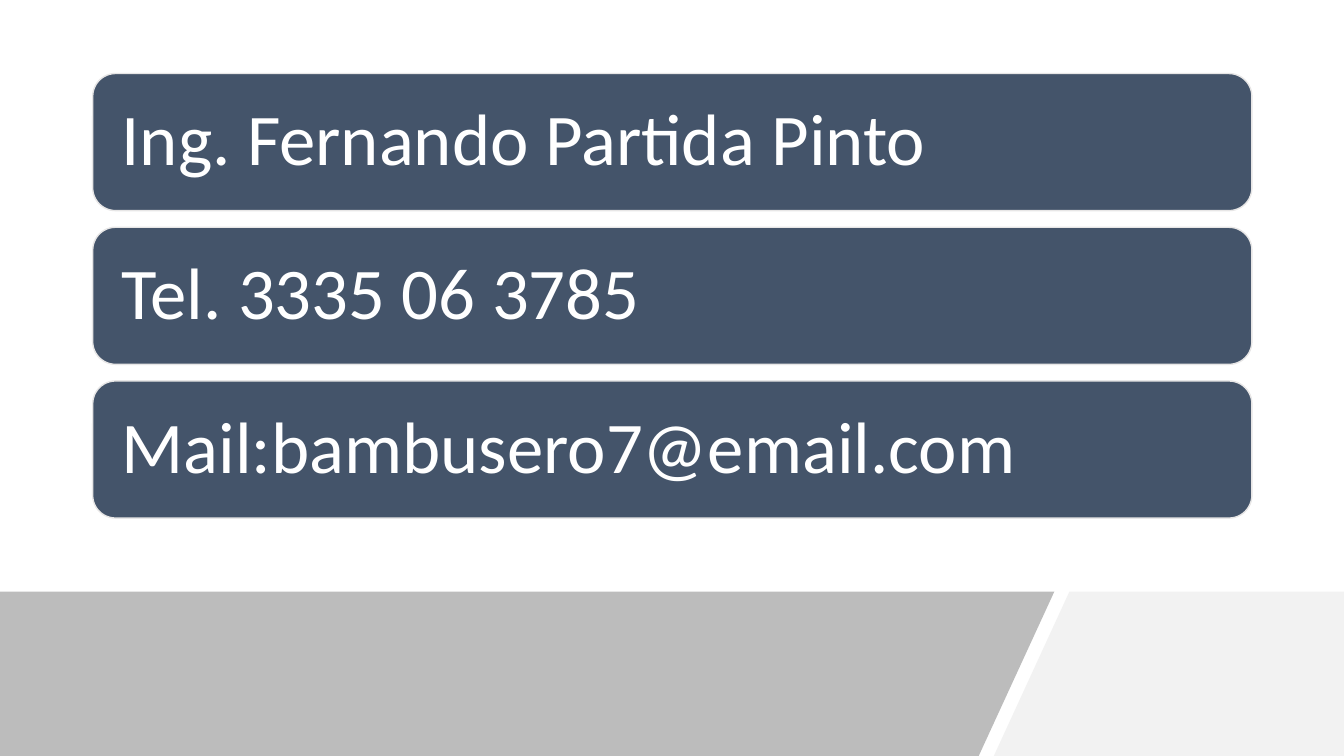
from lxml import etree
from pptx import Presentation
from pptx.dml.color import RGBColor
from pptx.enum.shapes import MSO_SHAPE
from pptx.enum.text import MSO_ANCHOR, PP_ALIGN
from pptx.oxml.ns import qn
from pptx.util import Pt

ROUNDED = MSO_SHAPE.ROUNDED_RECTANGLE
MIDDLE = MSO_ANCHOR.MIDDLE
LEFT = PP_ALIGN.LEFT

COLORS = {
    "bar": "44546A",
    "bar_line": "E7E6E6",
    "text": "FFFFFF",
    "footer_left": "595959",
    "footer_right": "F2F2F2",
}
FONT = "Calibri"
SLIDE_W, SLIDE_H = 960, 540
FOOTER_TOP = 422.64
BAR_LEFT, BAR_TOP, BAR_W, BAR_H = 66.24, 52.56, 828, 97.92
BAR_STEP = 109.8
BAR_INSET = 15.84
CONTACT_LINES = [
    "Ing. Fernando Partida Pinto",
    "Tel. 3335 06 3785",
    "Mail:bambusero7@email.com",
]


def rgb(name):
    return RGBColor.from_string(COLORS[name])


def add_footer_panel(s, points, color, opacity=100):
    corners = [(Pt(x), Pt(y)) for x, y in points]
    builder = s.shapes.build_freeform(*corners[0])
    builder.add_line_segments(corners[1:], close=True)
    sp = builder.convert_to_shape()
    sp.shadow.inherit = False
    sp.fill.solid()
    sp.fill.fore_color.rgb = rgb(color)
    sp.line.fill.background()
    if opacity < 100:
        clr = sp._element.spPr.find(qn("a:solidFill"))[0]
        etree.SubElement(clr, qn("a:alpha"), val=str(opacity * 1000))


def add_contact_bar(s, top, text):
    sp = s.shapes.add_shape(ROUNDED, Pt(BAR_LEFT), Pt(top), Pt(BAR_W), Pt(BAR_H))
    sp.shadow.inherit = False
    sp.fill.solid()
    sp.fill.fore_color.rgb = rgb("bar")
    sp.line.color.rgb = rgb("bar_line")
    sp.line.width = Pt(1)

    tf = sp.text_frame
    tf.text = text
    tf.word_wrap = True
    tf.vertical_anchor = MIDDLE
    tf.margin_left = tf.margin_right = Pt(BAR_INSET)
    tf.margin_top = tf.margin_bottom = Pt(BAR_INSET)
    p = tf.paragraphs[0]
    p.alignment = LEFT
    p.line_spacing = 0.9
    r = p.runs[0]
    r.font.name = FONT
    r.font.size = Pt(52)
    r.font.color.rgb = rgb("text")


def main():
    prs = Presentation()
    prs.slide_width, prs.slide_height = Pt(SLIDE_W), Pt(SLIDE_H)
    s = prs.slides.add_slide(prs.slide_layouts[6])

    # Footer panels with slanted edges
    add_footer_panel(s, [(763.92, FOOTER_TOP), (SLIDE_W, FOOTER_TOP),
                         (SLIDE_W, SLIDE_H), (709.92, SLIDE_H)], "footer_right")
    add_footer_panel(s, [(0, FOOTER_TOP), (753.12, FOOTER_TOP),
                         (699.12, SLIDE_H), (0, SLIDE_H)], "footer_left", 40)

    # Contact bars
    for i, text in enumerate(CONTACT_LINES):
        add_contact_bar(s, BAR_TOP + i * BAR_STEP, text)

    prs.save("out.pptx")


if __name__ == "__main__":
    main()
